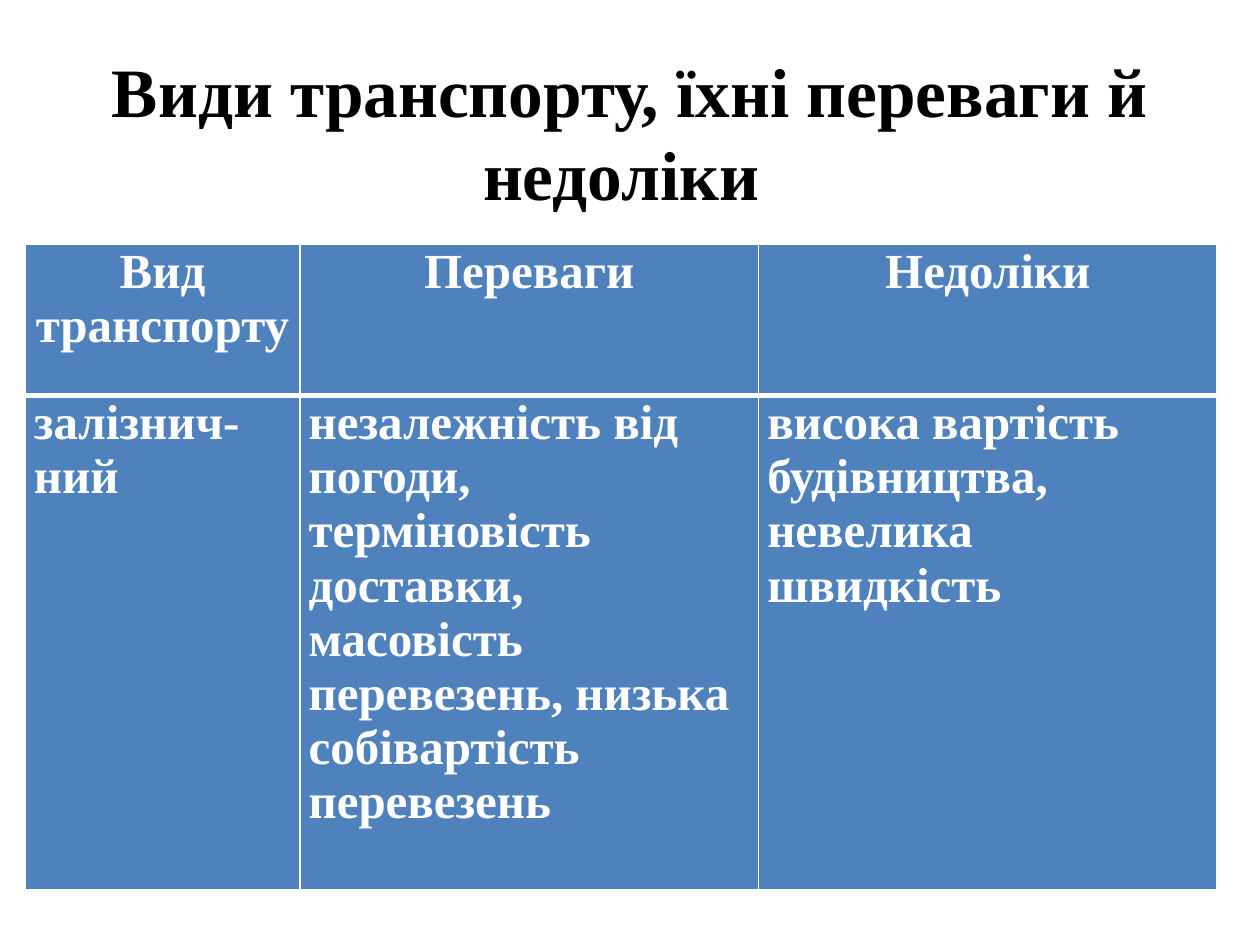
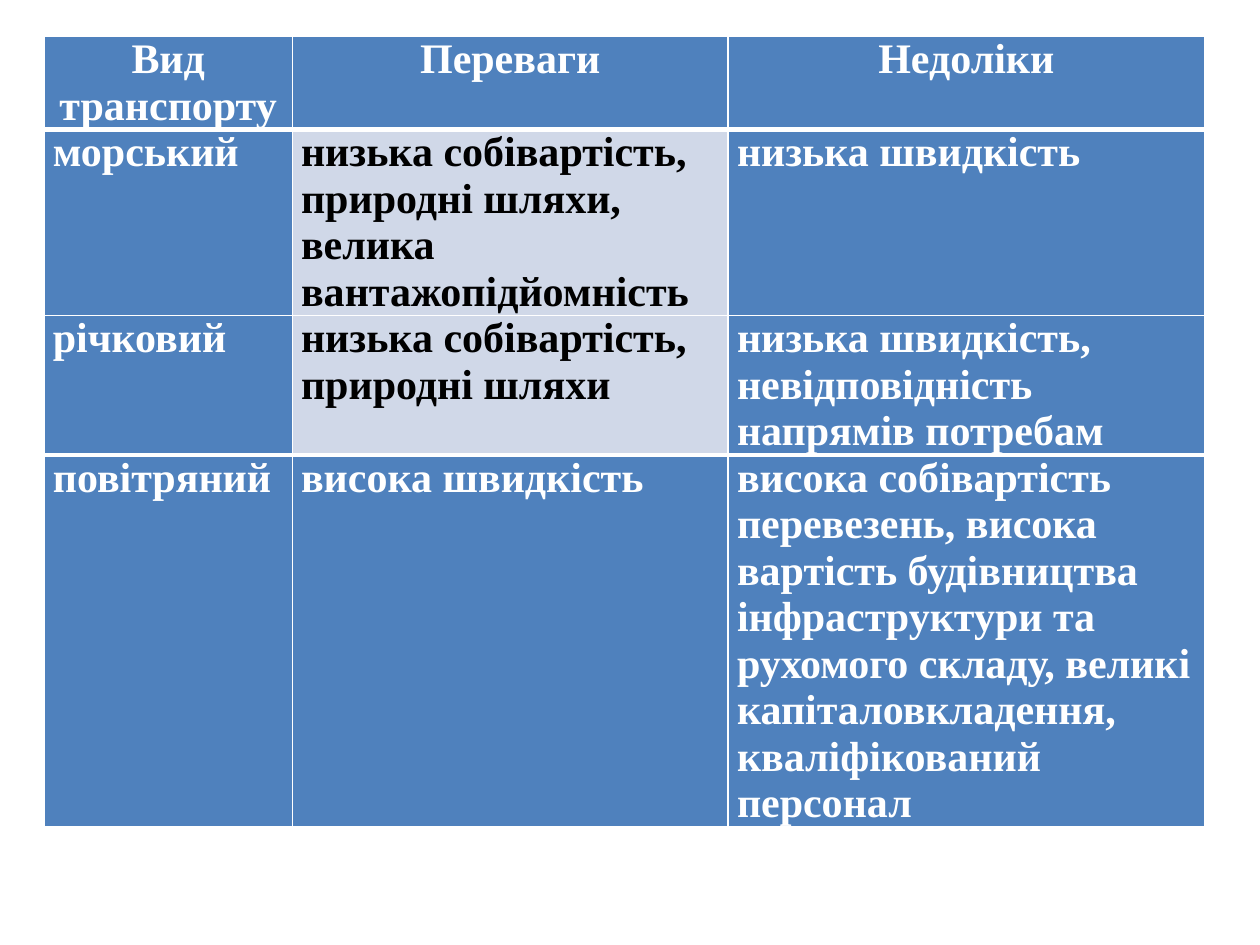
import pptx
import pptx.util
import pptx.dml.color
import pptx.enum.text
import pptx.oxml
import pptx.oxml.ns
from pptx.util import Inches

WHITE = pptx.dml.color.RGBColor(0xFF, 0xFF, 0xFF)
BLACK = pptx.dml.color.RGBColor(0x00, 0x00, 0x00)
BLUE = pptx.dml.color.RGBColor(0x4F, 0x81, 0xBD)
PALE = pptx.dml.color.RGBColor(0xD0, 0xD8, 0xE8)
FONT = "Times New Roman"
CENTER = pptx.enum.text.PP_ALIGN.CENTER
LEFT = pptx.enum.text.PP_ALIGN.LEFT
HEADER = ["Вид транспорту", "Переваги", "Недоліки"]


def style_text(frame, size, color, alignment):
    for para in frame.paragraphs:
        para.alignment = alignment
        for span in para.runs:
            span.font.name = FONT
            span.font.size = pptx.util.Pt(size)
            span.font.bold = True
            span.font.color.rgb = color


def add_transport_table(page, left, top, widths, heights, rows, size, thick_above, pale_cells):
    frame = page.shapes.add_table(len(rows), len(widths), Inches(left), Inches(top),
                                  Inches(sum(widths)), Inches(sum(heights)))
    table = frame.table
    table.horz_banding = False
    for column, width in zip(table.columns, widths):
        column.width = Inches(width)
    for row, height in zip(table.rows, heights):
        row.height = Inches(height)
    for r, texts in enumerate(rows):
        for c, text in enumerate(texts):
            cell = table.cell(r, c)
            pale = (r, c) in pale_cells
            cell.text_frame.text = text
            cell.margin_left = cell.margin_right = Inches(0.07)
            cell.margin_top = cell.margin_bottom = 0
            cell.fill.solid()
            cell.fill.fore_color.rgb = PALE if pale else BLUE
            style_text(cell.text_frame, size, BLACK if pale else WHITE, LEFT if r else CENTER)
            borders = {"lnL": 1, "lnR": 1,
                       "lnT": 3 if r in thick_above else 1,
                       "lnB": 3 if r + 1 in thick_above else 1}
            properties = cell._tc.get_or_add_tcPr()
            for index, (side, points) in enumerate(borders.items()):
                properties.insert(index, pptx.oxml.parse_xml(
                    f'<a:{side} {pptx.oxml.ns.nsdecls("a")} w="{pptx.util.Pt(points)}">'
                    f'<a:solidFill><a:srgbClr val="{WHITE}"/></a:solidFill></a:{side}>'))


deck = pptx.Presentation()
deck.slide_width = Inches(10)
deck.slide_height = Inches(7.5)

page = deck.slides.add_slide(deck.slide_layouts[5])
title = page.shapes.title
title.left, title.top = Inches(0.5), Inches(0.3)
title.width, title.height = Inches(9), Inches(1.48)
title.text_frame.text = "Види транспорту, їхні переваги й недоліки "
title.text_frame.vertical_anchor = pptx.enum.text.MSO_ANCHOR.MIDDLE
style_text(title.text_frame, 39.6, BLACK, CENTER)

railway_rows = [
    HEADER,
    ["залізнич-ний",
     "незалежність від погоди, терміновість доставки,\n"
     "масовість перевезень, низька собівартість перевезень",
     "висока вартість будівництва, невелика швидкість"],
]
add_transport_table(page, 0.2, 1.94, [2.18, 3.64, 3.64], [1.2, 3.92],
                    railway_rows, 28, {1}, set())

page = deck.slides.add_slide(deck.slide_layouts[6])
water_and_air_rows = [
    HEADER,
    ["морський", "низька собівартість, природні шляхи, велика вантажопідйомність",
     "низька швидкість"],
    ["річковий", "низька собівартість, природні шляхи",
     "низька швидкість, невідповідність напрямів потребам"],
    ["повітряний", "висока швидкість",
     "висока собівартість перевезень, висока вартість будівництва інфраструктури "
     "та рухомого складу, великі капіталовкладення, кваліфікований персонал"],
]
add_transport_table(page, 0.35, 0.29, [1.97, 3.46, 3.78], [0.73, 1.47, 1.11, 2.95],
                    water_and_air_rows, 24, {1, 3}, {(1, 1), (2, 1)})

deck.save("out.pptx")
